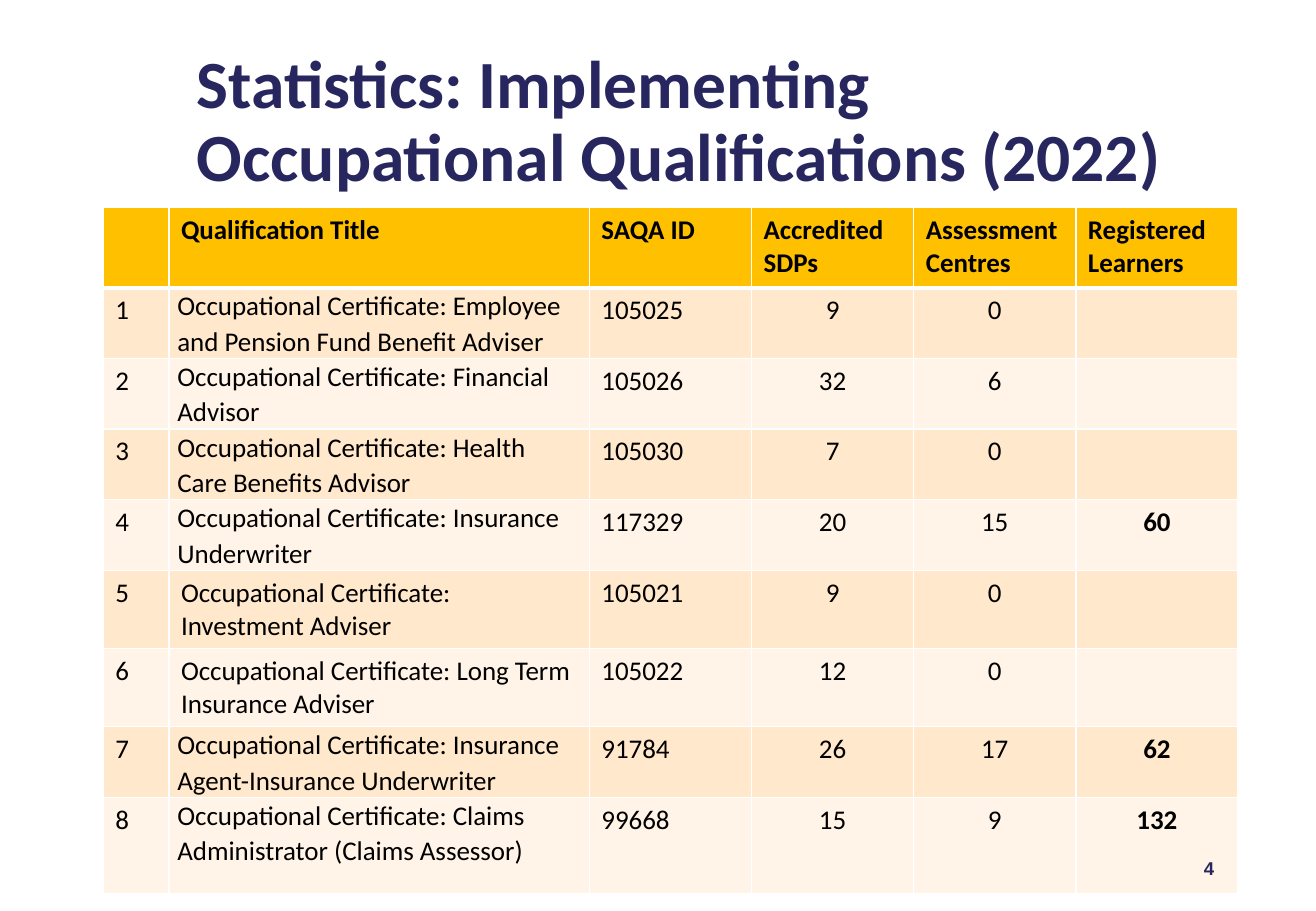
from lxml import etree
from pptx import Presentation
from pptx import util as u
from pptx.dml.color import RGBColor
from pptx.enum import text
from pptx.oxml.ns import qn

NAVY, BLACK, WHITE, AMBER = "27265F", "000000", "FFFFFF", "FFC000"
BANDS = ("FFE8CC", "FFF4E7")
LEFT, CENTER, RIGHT = text.PP_ALIGN.LEFT, text.PP_ALIGN.CENTER, text.PP_ALIGN.RIGHT

HEADINGS = ("", "Qualification Title", "SAQA ID", "Accredited SDPs",
            "Assessment Centres", "Registered Learners")
QUALIFICATIONS = (
    ("Employee and Pension Fund Benefit Adviser", "105025", "9", "0", ""),
    ("Financial Advisor", "105026", "32", "6", ""),
    ("Health Care Benefits Advisor", "105030", "7", "0", ""),
    ("Insurance Underwriter", "117329", "20", "15", "60"),
    ("Investment Adviser", "105021", "9", "0", ""),
    ("Long Term Insurance Adviser", "105022", "12", "0", ""),
    ("Insurance Agent-Insurance Underwriter", "91784", "26", "17", "62"),
    ("Claims Administrator (Claims Assessor)", "99668", "15", "9", "132"),
)
ROW_HEIGHTS = (0.66, 0.52, 0.52, 0.52, 0.52, 0.59, 0.59, 0.52, 0.79)
ROOMY_ROWS = (5, 6)
TITLE_COLUMN, FIRST_COUNT_COLUMN, LEARNERS_COLUMN = 1, 3, 5


def rgb(color):
    return RGBColor.from_string(color)


def write(frame, words, size=16, color=BLACK, bold=False, font="Calibri",
          align=LEFT, spacing=None):
    para = frame.paragraphs[0]
    para.alignment = align
    if spacing:
        para.line_spacing = spacing
    if words:
        span = para.add_run()
        span.text = words
        span.font.size = u.Pt(size)
        span.font.name = font
        span.font.bold = bold
        span.font.color.rgb = rgb(color)


def set_borders(cell, bottom=1):
    properties = cell._tc.get_or_add_tcPr()
    for side, width in (("L", 1), ("R", 1), ("T", 1), ("B", bottom)):
        line = etree.SubElement(properties, qn(f"a:ln{side}"), w=str(u.Pt(width)))
        fill = etree.SubElement(line, qn("a:solidFill"))
        etree.SubElement(fill, qn("a:srgbClr"), val=WHITE)


def set_fill(cell, color):
    cell.fill.solid()
    cell.fill.fore_color.rgb = rgb(color)


def fill_header(table):
    for column, heading in enumerate(HEADINGS):
        cell = table.cell(0, column)
        set_borders(cell, bottom=3)
        set_fill(cell, AMBER)
        write(cell.text_frame, heading, bold=True)


def fill_row(table, row, qualification):
    name, *figures = qualification
    values = (str(row), f"Occupational Certificate: {name}", *figures)
    for column, value in enumerate(values):
        cell = table.cell(row, column)
        set_borders(cell)
        set_fill(cell, BANDS[(row - 1) % 2])
        tight = column == TITLE_COLUMN and row not in ROOMY_ROWS
        if tight:
            cell.margin_left = cell.margin_right = u.Inches(0.07)
            cell.margin_top = cell.margin_bottom = 0
        write(cell.text_frame, value, bold=column == LEARNERS_COLUMN,
              align=CENTER if column >= FIRST_COUNT_COLUMN else LEFT,
              spacing=1.07 if tight else None)


def add_statistics(page, left, top, width):
    table = page.shapes.add_table(
        len(ROW_HEIGHTS), len(HEADINGS), u.Inches(left), u.Inches(top),
        u.Inches(width), u.Inches(sum(ROW_HEIGHTS))).table
    number_width, title_width = 0.54, 3.46
    figure_width = (width - number_width - title_width) / 4
    widths = (number_width, title_width, *[figure_width] * 4)
    for column, column_width in zip(table.columns, widths):
        column.width = u.Inches(column_width)
    for row, height in zip(table.rows, ROW_HEIGHTS):
        row.height = u.Inches(height)
    fill_header(table)
    for row, qualification in enumerate(QUALIFICATIONS, start=1):
        fill_row(table, row, qualification)


def set_title(page, left, top, width, height):
    title = page.shapes.title
    title.left, title.top = u.Inches(left), u.Inches(top)
    title.width, title.height = u.Inches(width), u.Inches(height)
    frame = title.text_frame
    frame.auto_size = text.MSO_AUTO_SIZE.NONE
    frame.vertical_anchor = text.MSO_ANCHOR.MIDDLE
    write(frame, "Statistics: Implementing Occupational Qualifications (2022)",
          size=40, color=NAVY, bold=True, spacing=0.9)


def add_page_number(page, left, top, width, height):
    frame = page.shapes.add_textbox(u.Inches(left), u.Inches(top),
                                    u.Inches(width), u.Inches(height)).text_frame
    frame.word_wrap = True
    frame.vertical_anchor = text.MSO_ANCHOR.MIDDLE
    write(frame, "4", size=11, color=NAVY, bold=True, font="Arial", align=RIGHT)


def main():
    deck = Presentation()
    deck.slide_width, deck.slide_height = u.Inches(10.83), u.Inches(7.5)
    page = deck.slides.add_slide(deck.slide_layouts.get_by_name("Title Only"))
    set_title(page, 1.52, 0.32, 8.67, 1.39)
    add_statistics(page, 0.85, 1.71, 9.34)
    add_page_number(page, 7.65, 6.95, 2.44, 0.4)
    deck.save("out.pptx")


if __name__ == "__main__":
    main()
